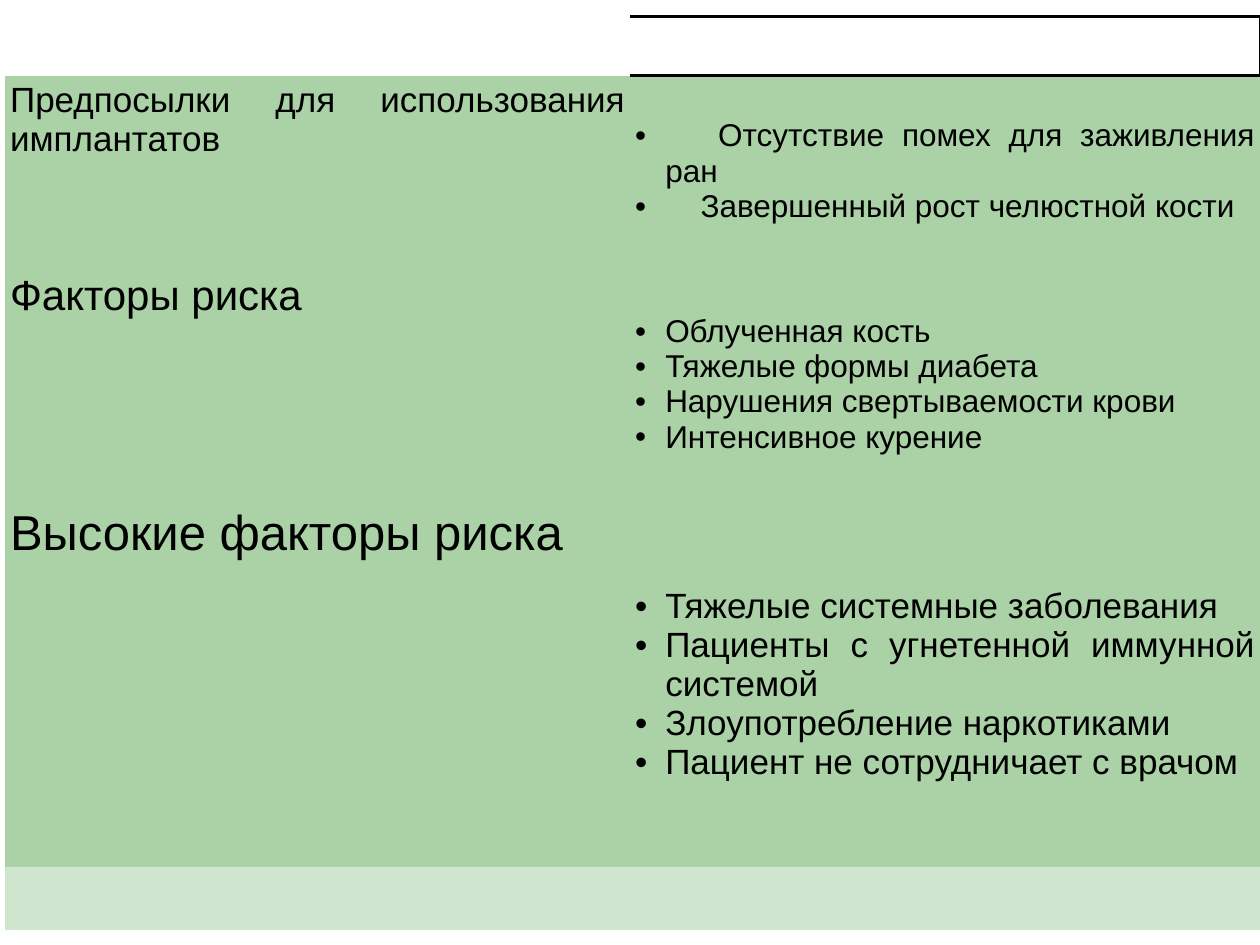
from pptx import Presentation
from pptx.dml.color import RGBColor
from pptx.enum.text import MSO_ANCHOR as Anchor, PP_ALIGN as Align
from pptx.oxml.ns import qn
from pptx.util import Inches, Pt
from lxml.etree import SubElement as Sub

GREEN, PALE, BLACK = "AAD2A6", "D0E5CD", "000000"
PLAIN = "{2D5ABB26-0587-4C30-8999-92F81FD0307C}"
COLS = [4.96, 5]
ROWS = [0.47, 1.52, 1.86, 2.9, 0.5]
PAD = 0.04
HANG = 0.24
TOPICS = [
    ("Предпосылки для использования имплантатов", 20, 18, [
        ("Отсутствие помех для заживления ран", 0.66),
        ("Завершенный рост челюстной кости", 0.52)]),
    ("Факторы риска", 24, 18, [
        ("Облученная кость", 0),
        ("Тяжелые формы диабета", 0),
        ("Нарушения свертываемости крови", 0),
        ("Интенсивное курение", 0)]),
    ("Высокие факторы риска", 28, 20, [
        ("Тяжелые системные заболевания", 0),
        ("Пациенты с угнетенной иммунной системой", 0),
        ("Злоупотребление наркотиками", 0),
        ("Пациент не сотрудничает с врачом", 0)]),
]


def color(code):
    """Turn a hex string into a colour."""
    return RGBColor.from_string(code)


def paint(cell, code):
    """Fill a cell with one colour."""
    cell.fill.solid()
    cell.fill.fore_color.rgb = color(code)


def write(par, text, size):
    """Add one justified run to a paragraph."""
    par.alignment = Align.JUSTIFY
    run = par.add_run()
    run.text = text
    run.font.size = Pt(size)
    run.font.name = "Arial"
    run.font.color.rgb = color(BLACK)


def bullet(par, stop):
    """Give a paragraph a hanging bullet and an optional tab stop."""
    props = par._p.get_or_add_pPr()
    props.set("marL", str(Inches(HANG)))
    props.set("indent", str(-Inches(HANG)))
    Sub(props, qn("a:buFont"), typeface="Arial")
    Sub(props, qn("a:buChar"), char="•")
    if stop:
        tabs = Sub(props, qn("a:tabLst"))
        Sub(tabs, qn("a:tab"), pos=str(Inches(stop)), algn="l")


def border(cell, sides):
    """Draw black lines on the named sides of a cell."""
    props = cell._tc.get_or_add_tcPr()
    for spot, side in enumerate(sides):
        line = Sub(props, qn(f"a:ln{side}"), w=str(Pt(1.5)))
        fill = Sub(line, qn("a:solidFill"))
        Sub(fill, qn("a:srgbClr"), val=BLACK)
        props.insert(spot, line)


def topic(left, right, title, big, small, points):
    """Fill one row with a title and its bullet list."""
    for cell in (left, right):
        paint(cell, GREEN)
        cell.margin_left = cell.margin_right = Inches(PAD)
        cell.margin_top = cell.margin_bottom = Inches(PAD)
    write(left.text_frame.paragraphs[0], title, big)
    right.vertical_anchor = Anchor.MIDDLE
    frame = right.text_frame
    for spot, (text, stop) in enumerate(points):
        par = frame.add_paragraph() if spot else frame.paragraphs[0]
        bullet(par, stop)
        write(par, "\t" + text if stop else text, small)


def risks(slide, x, y):
    """Place the table of implant risks."""
    shape = slide.shapes.add_table(len(ROWS), len(COLS), Inches(x), Inches(y),
                                   Inches(sum(COLS)), Inches(sum(ROWS)))
    table = shape.table
    table._tbl.tblPr.find(qn("a:tableStyleId")).text = PLAIN
    table.first_row = table.horz_banding = False
    for col, width in zip(table.columns, COLS):
        col.width = Inches(width)
    for row, height in zip(table.rows, ROWS):
        row.height = Inches(height)
    border(table.cell(0, 1), "RTB")
    for row, item in enumerate(TOPICS, 1):
        topic(table.cell(row, 0), table.cell(row, 1), *item)
    last = table.cell(len(ROWS) - 1, 0)
    last.merge(table.cell(len(ROWS) - 1, 1))
    paint(last, PALE)


def main():
    """Build and save the slide."""
    deck = Presentation()
    deck.slide_width, deck.slide_height = Inches(10), Inches(7.5)
    slide = deck.slides.add_slide(deck.slide_layouts[6])
    risks(slide, 0.04, 0.13)
    deck.save("out.pptx")


if __name__ == "__main__":
    main()
